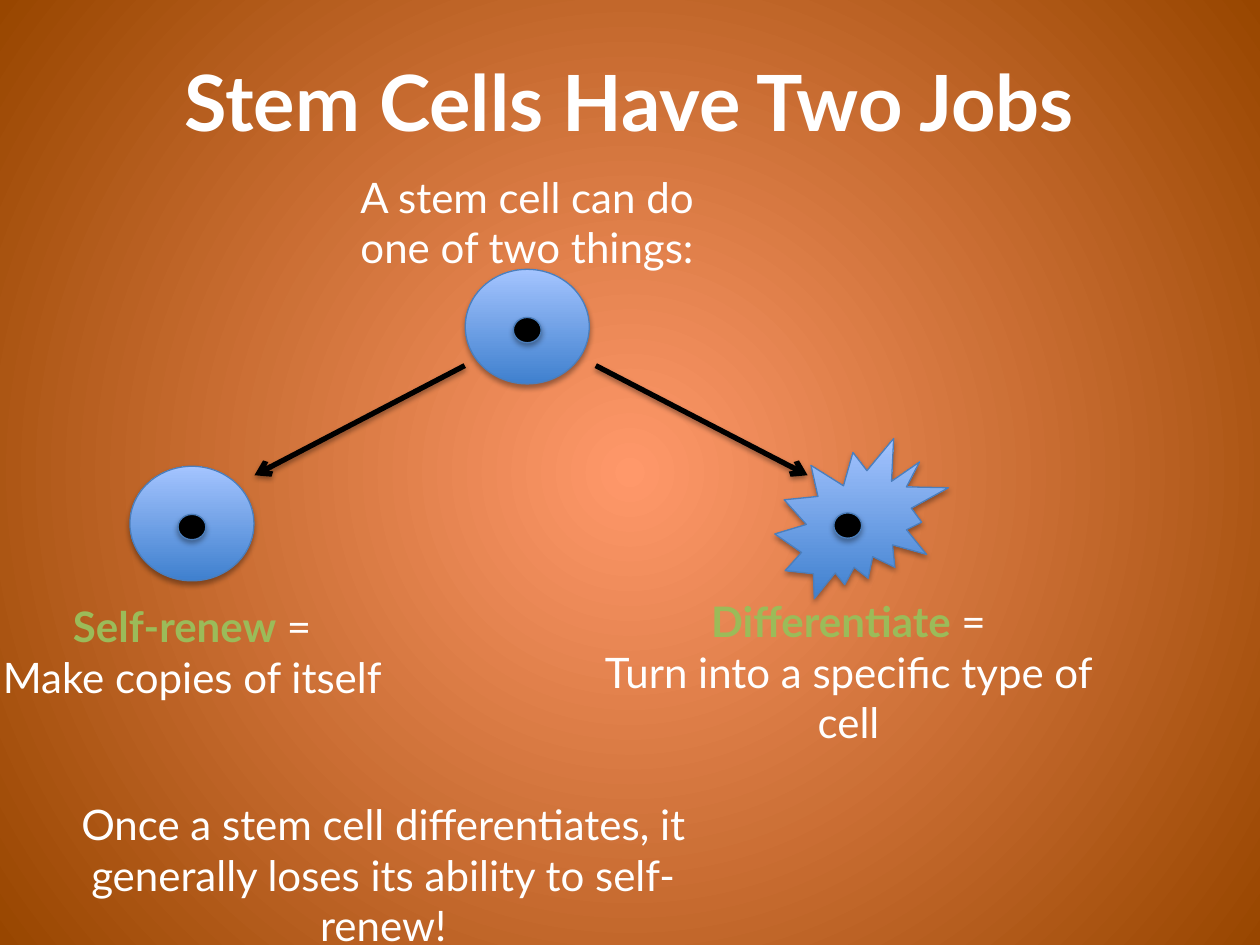
from lxml.etree import SubElement
from pptx import Presentation
from pptx.dml.color import RGBColor
from pptx.enum.shapes import MSO_CONNECTOR, MSO_SHAPE
from pptx.enum.text import MSO_ANCHOR, MSO_AUTO_SIZE, PP_ALIGN
from pptx.oxml import parse_xml
from pptx.oxml.ns import nsdecls, qn
from pptx.util import Cm, Pt

# Content: lengths in cm, boxes as left, top, width, height
TITLE = ("Stem Cells Have Two Jobs", (1.09, 1.12, 23.19, 1.8))
NOTES = [  # key term, lines, box
    ("", ["A stem cell can do one of two things:"], (6.32, 3.33, 8.61, 2.31)),
    ("Self-renew", [" =", "Make copies of itself"], (-0.43, 11.99, 8.61, 2.31)),
    ("Differentiate", [" =", "Turn into a specific type of cell"],
     (11.3, 11.89, 11.61, 2.31)),
    ("", ["Once a stem cell differentiates, it generally loses its ability "
          "to self-renew!"], (0.51, 15.98, 14.43, 2.31)),
]
ROUND, SPIKY = MSO_SHAPE.OVAL, MSO_SHAPE.EXPLOSION2
CELLS = [  # outline, box, offset of the nucleus
    (ROUND, (9.38, 5.43, 2.5, 2.31), (0.97, 0.97)),
    (ROUND, (2.62, 9.4, 2.5, 2.31), (0.97, 0.97)),
    (SPIKY, (15.62, 8.84, 3.5, 3.23), (1.19, 1.5)),
]
CORE = (0.56, 0.51)
ARROWS = [(9.37, 7.37, 5.13, 9.58), (12.01, 7.37, 16.28, 9.58)]

THEME = {
    "font": "Lato", "title": 44.3, "body": 24,
    "text": "FFFFFF", "key": "9BBB59", "key_line": "4F81BD",
    "back": ("FF986A", "984600"), "cell": ("3F80CE", "A4C4FF"),
    "edge": "4B7EBC", "dark": "000000",
}


def rgb(name):
    return RGBColor.from_string(THEME[name])


def blend(fill, name):
    fill.gradient()
    for stop, tone in zip(fill.gradient_stops, THEME[name]):
        stop.color.rgb = RGBColor.from_string(tone)


def shade(props, alpha, dist):
    """Put a soft shadow straight below a shape or line."""
    list_ = props.find(qn("a:effectLst"))
    if list_ is None:
        list_ = SubElement(props, qn("a:effectLst"))
    list_.append(parse_xml(
        f'<a:outerShdw {nsdecls("a")} blurRad="{Pt(3.1)}" dist="{Pt(dist)}" '
        f'dir="5400000" rotWithShape="0"><a:srgbClr val="{THEME["dark"]}">'
        f'<a:alpha val="{alpha * 1000}"/></a:srgbClr></a:outerShdw>'))


def style(run, size, color="text", bold=False):
    font = run.font
    font.name, font.size, font.bold = THEME["font"], Pt(THEME[size]), bold
    font.color.rgb = rgb(color)


def add_box(slide, box):
    frame = slide.shapes.add_textbox(*map(Cm, box)).text_frame
    frame.word_wrap = True
    return frame


def add_note(slide, key, lines, box):
    frame = add_box(slide, box)
    frame.auto_size = MSO_AUTO_SIZE.SHAPE_TO_FIT_TEXT
    frame.text = "\n".join(lines)
    if key:
        para = frame.paragraphs[0]
        rest = para.text
        para.text = key
        para.add_run().text = rest
    for para in frame.paragraphs:
        para.alignment = PP_ALIGN.CENTER
        for run in para.runs:
            style(run, "body")
    if key:
        run = frame.paragraphs[0].runs[0]
        style(run, "body", "key", True)
        run.font._element.insert(0, parse_xml(
            f'<a:ln {nsdecls("a")} w="{Pt(0.75)}"><a:solidFill>'
            f'<a:srgbClr val="{THEME["key_line"]}"/></a:solidFill></a:ln>'))


def add_part(group, kind, box):
    part = group.shapes.add_shape(kind, *map(Cm, box))
    part.line.color.rgb = rgb("edge")
    part.line.width = Pt(0.75)
    part.shadow.inherit = False
    shade(part.element.spPr, 35, 1.8)
    return part.fill


def add_cell(slide, kind, box, shift):
    group = slide.shapes.add_group_shape()
    body = add_part(group, kind, box)
    blend(body, "cell")
    body.gradient_angle = 90
    core = add_part(group, ROUND, (box[0] + shift[0], box[1] + shift[1], *CORE))
    core.solid()
    core.fore_color.rgb = rgb("dark")


def add_arrow(slide, ends):
    arrow = slide.shapes.add_connector(MSO_CONNECTOR.STRAIGHT, *map(Cm, ends))
    arrow.line.color.rgb = rgb("dark")
    arrow.line.width = Pt(3)
    props = arrow.element.spPr
    SubElement(props.find(qn("a:ln")), qn("a:tailEnd"), type="arrow")
    shade(props, 38, 1.6)


def main():
    deck = Presentation()
    deck.slide_width, deck.slide_height = Cm(25.4), Cm(19.05)
    slide = deck.slides.add_slide(deck.slide_layouts[6])

    # Background glowing from the centre
    blend(slide.background.fill, "back")
    grad = slide.element.find(".//" + qn("a:gradFill"))
    grad.replace(grad.find(qn("a:lin")), parse_xml(
        f'<a:path {nsdecls("a")} path="circle"><a:fillToRect l="50000" '
        't="50000" r="50000" b="50000"/></a:path>'))

    # Title
    text, box = TITLE
    frame = add_box(slide, box)
    frame.vertical_anchor = MSO_ANCHOR.MIDDLE
    frame.text = text
    frame.paragraphs[0].alignment = PP_ALIGN.CENTER
    style(frame.paragraphs[0].runs[0], "title", bold=True)

    # Cells, notes and arrows
    for cell in CELLS:
        add_cell(slide, *cell)
    for note in NOTES:
        add_note(slide, *note)
    for ends in ARROWS:
        add_arrow(slide, ends)

    deck.save("out.pptx")


if __name__ == "__main__":
    main()
